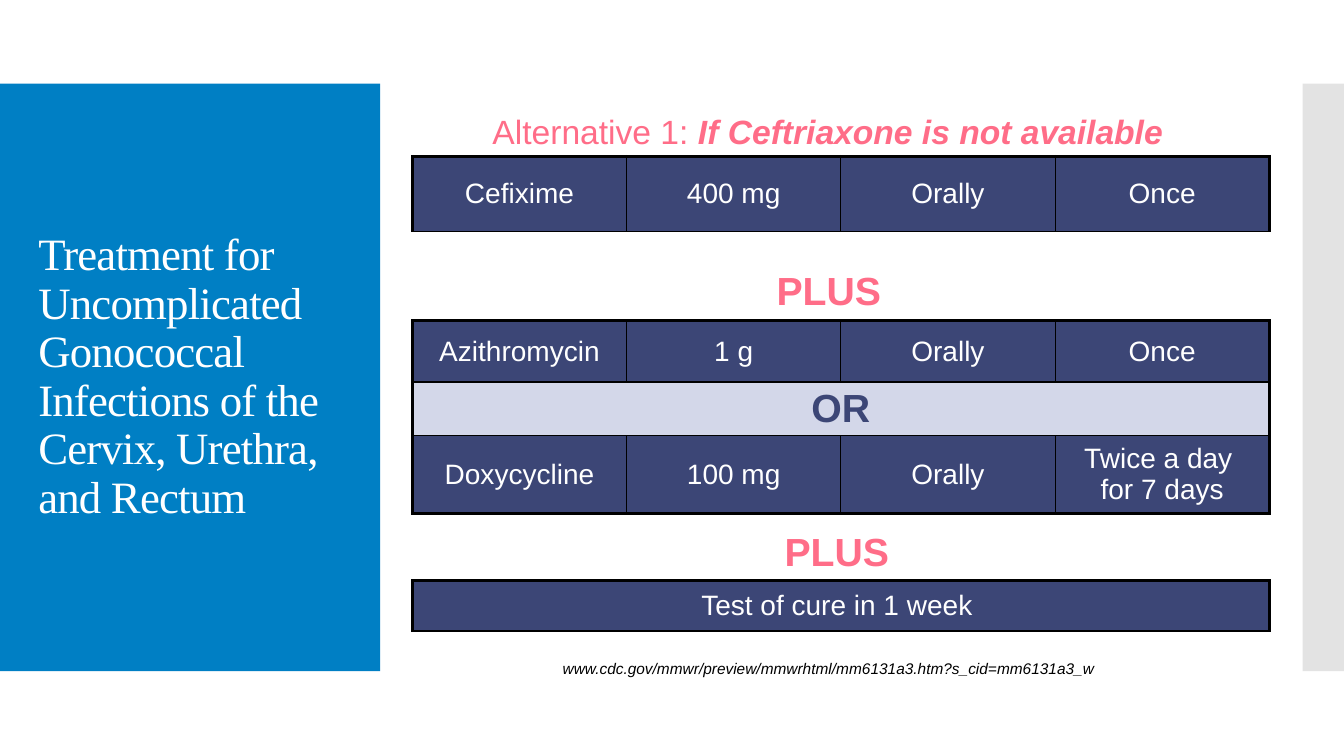
from lxml import etree
from pptx import Presentation, util as u
from pptx.dml.color import RGBColor
from pptx.enum import shapes, text
from pptx.oxml.ns import qn

COLORS = {
    "blue": "007FC4", "grey": "C8C8C8", "navy": "3C4676", "pale": "D3D7E9",
    "pink": "FF6D88", "white": "FFFFFF", "black": "000000",
}
CELL = {"size": u.Pt(20), "name": "Arial", "color": "white"}
OR_CELL = {"size": u.Pt(28), "name": "Arial", "color": "navy", "bold": True}
PLUS = {"size": u.Pt(28), "name": "Arial", "color": "pink", "bold": True}
HEADING = {"size": u.Pt(24), "name": "Arial", "color": "pink"}
SOURCE = {"size": u.Pt(11), "name": "Arial", "color": "black", "italic": True}
TITLE = {"size": u.Pt(32), "name": "Times New Roman", "color": "white"}
THICK, THIN = 2.25, 1
TABLE_LEFT, TABLE_WIDTH = 4.09, 8.5


class TreatmentSlide:
    def __init__(self, deck):
        self.page = deck.slides.add_slide(deck.slide_layouts[5])

    def color(self, name):
        return RGBColor.from_string(COLORS[name])

    def add_span(self, para, words, style):
        span = para.add_run()
        span.text = words
        for key, value in style.items():
            if key == "color":
                span.font.color.rgb = self.color(value)
            else:
                setattr(span.font, key, value)
        return span

    def panel(self, left, width, fill, alpha=None):
        box = self.page.shapes.add_shape(
            shapes.MSO_SHAPE.RECTANGLE,
            *map(u.Inches, (left, 0.83, width, 5.83)))
        box.shadow.inherit = False
        box.fill.solid()
        box.fill.fore_color.rgb = self.color(fill)
        box.line.fill.background()
        if alpha:
            tint = box._element.spPr.find(".//" + qn("a:srgbClr"))
            etree.SubElement(tint, qn("a:alpha"), val=str(alpha * 1000))

    def title(self, words, left, top, width, height):
        box = self.page.shapes.title
        box._element.getparent().append(box._element)  # in front of the panels
        box.left, box.top, box.width, box.height = map(
            u.Inches, (left, top, width, height))
        frame = box.text_frame
        frame.word_wrap = True
        frame.auto_size = text.MSO_AUTO_SIZE.NONE
        frame.vertical_anchor = text.MSO_ANCHOR.MIDDLE
        para = frame.paragraphs[0]
        para.alignment = text.PP_ALIGN.LEFT
        para.line_spacing = 0.9
        span = self.add_span(para, words, TITLE)
        span._r.get_or_add_rPr().set("spc", "-60")

    def label(self, parts, left, top, width, height, wrap=True):
        box = self.page.shapes.add_textbox(
            *map(u.Inches, (left, top, width, height)))
        frame = box.text_frame
        frame.word_wrap = wrap
        frame.auto_size = text.MSO_AUTO_SIZE.SHAPE_TO_FIT_TEXT
        para = frame.paragraphs[0]
        para.alignment = text.PP_ALIGN.CENTER
        for words, style in parts:
            self.add_span(para, words, style)

    def border(self, cell, widths):
        props = cell._tc.get_or_add_tcPr()
        for place, (side, width) in enumerate(zip("LRTB", widths)):
            line = etree.Element(qn("a:ln" + side), w=str(u.Pt(width)))
            fill = etree.SubElement(line, qn("a:solidFill"))
            etree.SubElement(fill, qn("a:srgbClr"), val=COLORS["black"])
            props.insert(place, line)

    def table(self, top, heights, rows, bottom=THIN):
        columns = len(rows[0])
        grid = self.page.shapes.add_table(
            len(rows), columns,
            *map(u.Inches, (TABLE_LEFT, top, TABLE_WIDTH, sum(heights)))).table
        grid.first_row = grid.horz_banding = False
        for r, (height, row) in enumerate(zip(heights, rows)):
            grid.rows[r].height = u.Inches(height)
            merged = len(row) < columns
            if merged:
                grid.cell(r, 0).merge(grid.cell(r, columns - 1))
            for c, words in enumerate(row):
                cell = grid.cell(r, c)
                cell.fill.solid()
                cell.fill.fore_color.rgb = self.color("pale" if merged else "navy")
                cell.vertical_anchor = text.MSO_ANCHOR.MIDDLE
                para = cell.text_frame.paragraphs[0]
                para.alignment = text.PP_ALIGN.CENTER
                for n, line in enumerate(words.split("\n")):
                    if n:
                        para.add_line_break()
                    self.add_span(para, line, OR_CELL if merged else CELL)
            # Thick frame outside, thin rules inside
            for c in range(columns):
                self.border(grid.cell(r, c), (
                    THIN if c else THICK,
                    THICK if merged or c == columns - 1 else THIN,
                    THIN if r else THICK,
                    bottom if r == len(rows) - 1 else THIN))


def main():
    deck = Presentation()
    deck.slide_width, deck.slide_height = u.Inches(13.33), u.Inches(7.5)
    slide = TreatmentSlide(deck)

    # Side panels and title
    slide.panel(0, 3.77, "blue")
    slide.panel(12.92, 0.41, "grey", alpha=50)
    slide.title("Treatment for Uncomplicated Gonococcal Infections of the "
                "Cervix, Urethra, and Rectum", 0.28, 1.23, 3.22, 5.03)

    # Treatment tables
    slide.table(1.55, [0.75], [["Cefixime", "400 mg", "Orally", "Once"]])
    slide.table(3.18, [0.61, 0.43, 0.77], [
        ["Azithromycin", "1 g", "Orally", "Once"],
        ["OR"],
        ["Doxycycline", "100 mg", "Orally", "Twice a day \nfor 7 days"],
    ], bottom=THICK)
    slide.table(5.76, [0.5], [["Test of cure in 1 week "]])

    # Headings between the tables
    slide.label([("Alternative 1: ", HEADING),
                 ("If Ceftriaxone is not available",
                  {**HEADING, "bold": True, "italic": True})],
                4.16, 1.05, 8.1, 0.5)
    for left, top in ((6.01, 2.59), (6.09, 5.18)):
        slide.label([("PLUS", PLUS)], left, top, 4.42, 0.57)

    # Source link
    slide.label([("www.cdc.gov/mmwr/preview/mmwrhtml/mm6131a3.htm?s_cid=mm6131a3_w",
                  SOURCE)], 5.46, 6.49, 5.52, 0.29, wrap=False)

    deck.save("out.pptx")


if __name__ == "__main__":
    main()
